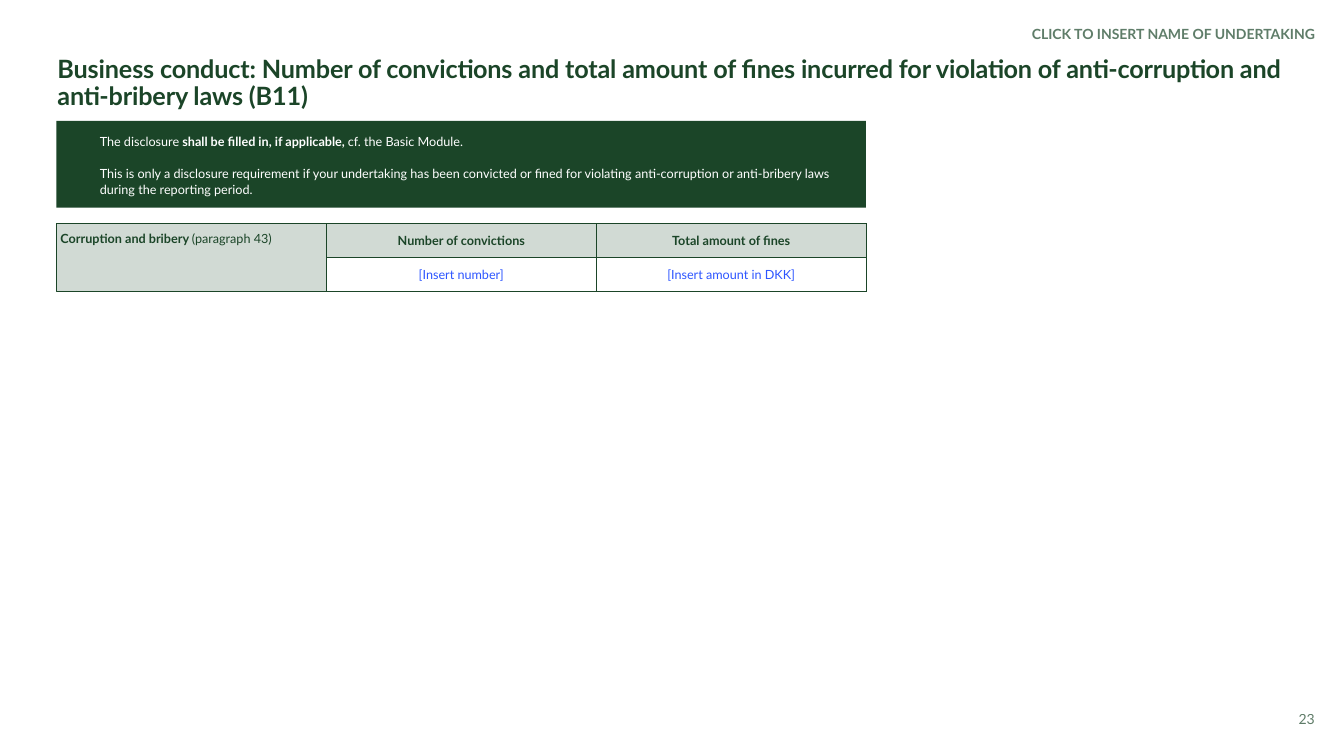
from lxml import etree
from pptx import Presentation
from pptx.dml.color import RGBColor
from pptx.enum.shapes import MSO_SHAPE
from pptx.enum.text import MSO_ANCHOR, PP_ALIGN
from pptx.oxml.ns import qn
from pptx.util import Inches, Pt

LEFT, RIGHT, CENTER = PP_ALIGN.LEFT, PP_ALIGN.RIGHT, PP_ALIGN.CENTER
TOP, MIDDLE = MSO_ANCHOR.TOP, MSO_ANCHOR.MIDDLE
RECT = MSO_SHAPE.RECTANGLE
FONT = "Lato"
COLORS = {"dark": "1B4528", "soft": "5F7D69", "pale": "D1DAD4",
          "blue": "2D55FF", "white": "FFFFFF"}


def rgb(name):
    return RGBColor.from_string(COLORS[name])


def add_run(para, text, size, color, bold=False):
    run = para.add_run()
    run.text = text
    font = run.font
    font.name, font.size, font.bold = FONT, Pt(size), bold
    font.color.rgb = rgb(color)
    return run


def set_frame(frame, pads=(0, 0, 0, 0)):
    frame.word_wrap = True
    frame.vertical_anchor = TOP
    (frame.margin_left, frame.margin_top,
     frame.margin_right, frame.margin_bottom) = map(Inches, pads)


def add_text(slide, box, text, size, color, bold=False, align=LEFT):
    frame = slide.shapes.add_textbox(*map(Inches, box)).text_frame
    set_frame(frame)
    para = frame.paragraphs[0]
    para.alignment = align
    return para, add_run(para, text, size, color, bold)


def add_panel(slide, box, fill, pads):
    panel = slide.shapes.add_shape(RECT, *map(Inches, box))
    panel.shadow.inherit = False
    panel.fill.solid()
    panel.fill.fore_color.rgb = rgb(fill)
    panel.line.fill.background()
    set_frame(panel.text_frame, pads)
    panel.text_frame.paragraphs[0].alignment = LEFT
    return panel


def add_border(cell):
    props = cell._tc.get_or_add_tcPr()
    for spot, side in enumerate(("lnL", "lnR", "lnT", "lnB")):
        line = etree.Element(qn("a:" + side), w=str(Pt(0.5)))
        fill = etree.SubElement(line, qn("a:solidFill"))
        etree.SubElement(fill, qn("a:srgbClr"), val=COLORS["dark"])
        props.insert(spot, line)


# Title, name of the undertaking and page number
def add_frame(slide, left, right):
    add_text(slide, (right - 3.98, 0.25, 3.98, 0.17),
             "CLICK TO INSERT NAME OF UNDERTAKING", 10, "soft", True, RIGHT)
    para, run = add_text(
        slide, (left, 0.56, 12.21, 0.55),
        "Business conduct: Number of convictions and total amount of fines "
        "incurred for violation of anti-corruption and anti-bribery laws (B11)",
        18, "dark", True)
    para.line_spacing = 0.9
    run.font._element.set("spc", "-10")
    para, run = add_text(slide, (right - 3, 7.05, 3, 0.17),
                         "23", 10, "dark", align=RIGHT)
    tint = run.font._element.find(".//" + qn("a:srgbClr"))
    etree.SubElement(tint, qn("a:alpha"), val="70000")


# Dark banner with the guidance
def add_guide(slide, box):
    frame = add_panel(slide, box, "dark", (0.43, 0.12, 0.16, 0.16)).text_frame
    first, last = frame.paragraphs[0], frame.add_paragraph()
    add_run(first, "The disclosure ", 9, "white")
    add_run(first, "shall be filled in, if applicable, ", 9, "white", True)
    add_run(first, "cf. the Basic Module.", 9, "white")
    add_run(last, "This is only a disclosure requirement if your undertaking "
            "has been convicted or fined for violating anti-corruption or "
            "anti-bribery laws during the reporting period.", 9, "white")
    last.alignment = LEFT
    last.space_before = Pt(11.4)
    for para in (first, last):
        para.line_spacing = 1.06


# Label and table of convictions and fines
def add_facts(slide, box):
    left, top, width, height = box
    col, row = width / 3, height / 2

    label = add_panel(slide, (left, top, col, height), "pale",
                      (0.04, 0.07, 0.04, 0.07))
    label.line.color.rgb = rgb("dark")
    label.line.width = Pt(0.5)
    para = label.text_frame.paragraphs[0]
    add_run(para, "Corruption and bribery ", 9, "dark", True)
    add_run(para, "(paragraph 43)", 9, "dark")

    rows = [("Number of convictions", "Total amount of fines"),
            ("[Insert number]", "[Insert amount in DKK]")]
    looks = [("pale", "dark", True), ("white", "blue", False)]
    spot = (left + col, top, 2 * col, height)
    table = slide.shapes.add_table(2, 2, *map(Inches, spot)).table
    for r, (texts, (fill, color, bold)) in enumerate(zip(rows, looks)):
        table.rows[r].height = Inches(row)
        for c, text in enumerate(texts):
            table.columns[c].width = Inches(col)
            cell = table.cell(r, c)
            cell.fill.solid()
            cell.fill.fore_color.rgb = rgb(fill)
            cell.vertical_anchor = MIDDLE
            cell.margin_left = cell.margin_right = Inches(0.06)
            cell.margin_top = cell.margin_bottom = Inches(0.04)
            para = cell.text_frame.paragraphs[0]
            para.alignment = CENTER
            add_run(para, text, 9, color, bold)
            add_border(cell)


def main():
    deck = Presentation()
    deck.slide_width, deck.slide_height = Inches(13.33), Inches(7.5)
    slide = deck.slides.add_slide(deck.slide_layouts[6])
    add_frame(slide, 0.57, 13.04)
    add_guide(slide, (0.56, 1.2, 8.03, 0.86))
    add_facts(slide, (0.56, 2.22, 8.03, 0.67))
    deck.save("out.pptx")


if __name__ == "__main__":
    main()
